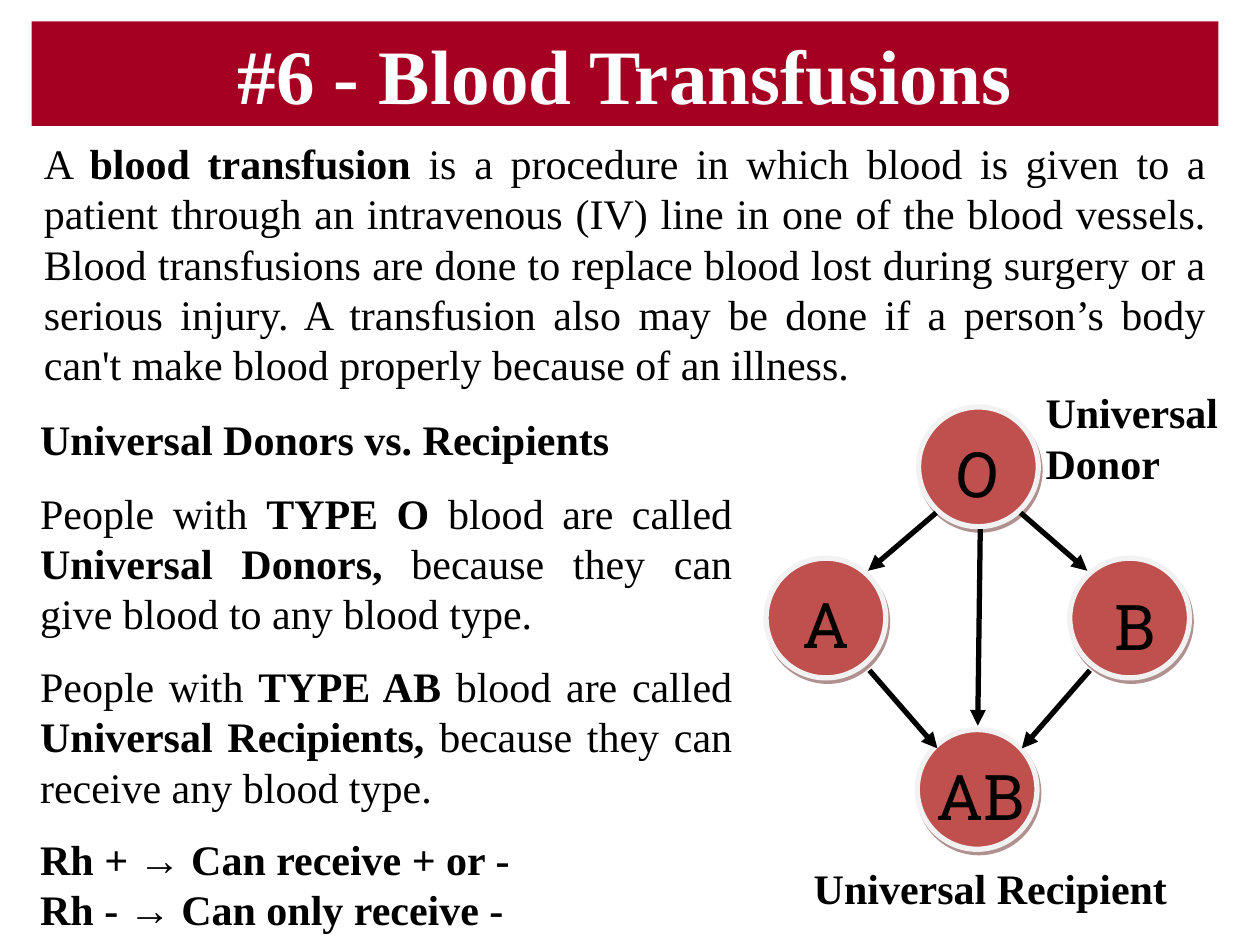
from lxml import etree
from pptx import Presentation
from pptx.dml.color import RGBColor
from pptx.enum.shapes import MSO_CONNECTOR, MSO_SHAPE
from pptx.enum.text import MSO_ANCHOR, PP_ALIGN
from pptx.oxml.ns import qn
from pptx.util import Inches, Pt

LEFT, MID, JUST = PP_ALIGN.LEFT, PP_ALIGN.CENTER, PP_ALIGN.JUSTIFY
SERIF, SLAB = "Times New Roman", "Roboto Slab"
BLACK, WHITE, CRIMSON = "000000", "FFFFFF", "A50021"
CELL, RIM, SHADE = "C0504D", "F2F2F2", "622423"

# A paragraph is (alignment, space before in points, runs); a run is (text, bold).
TITLE = [(MID, 0, [("#6 - Blood Transfusions", True)])]
INTRO = [(JUST, 0, [
    ("A ", False),
    ("blood transfusion ", True),
    ("is a procedure in which blood is given to a patient through an "
     "intravenous (IV) line in one of the blood vessels. Blood transfusions "
     "are done to replace blood lost during surgery or a serious injury. "
     "A transfusion also may be done if a person’s body can't make blood "
     "properly because of an illness. ", False),
])]
TYPES = [
    (JUST, 0, [("Universal Donors vs. Recipients", True)]),
    (JUST, 13.5, [
        ("People with ", False), ("TYPE O ", True),
        ("blood are called ", False), ("Universal Donors, ", True),
        ("because they can give blood to any blood type.", False)]),
    (JUST, 12.5, [
        ("People with ", False), ("TYPE AB ", True),
        ("blood are called ", False), ("Universal Recipients, ", True),
        ("because they can receive any blood type.", False)]),
    (LEFT, 12.5, [("Rh + → Can receive + or -", True)]),
    (LEFT, 0, [("Rh - → Can only receive -", True)]),
]
DONOR = [(LEFT, 0, [("Universal Donor", True)])]
TAKER = [(LEFT, 0, [("Universal Recipient", True)])]

TEXTS = [
    (INTRO, (0.25, 1.04, 9.42, 2.52)),
    (TYPES, (0.22, 3.23, 5.69, 4.37)),
    (DONOR, (8.2, 3.02, 1.86, 0.91)),
    (TAKER, (6.36, 6.8, 3.75, 0.5)),
]

SIZE = 0.95
# Blood type, circle corner, label box, label rotation
CELLS = [
    ("A", (6.08, 4.43), (6.33, 4.6, 0.46, 0.58), 0),
    ("B", (8.49, 4.43), (8.78, 4.61, 0.46, 0.58), 0),
    ("O", (7.29, 3.23), (7.54, 3.4, 0.46, 0.58), 6.1),
    ("AB", (7.28, 5.79), (7.36, 5.96, 0.84, 0.58), 0),
]
ARROWS = [
    ((7.78, 4.2), (7.76, 5.76)),
    ((7.43, 4.07), (6.89, 4.53)),
    ((8.1, 4.07), (8.63, 4.53)),
    ((6.9, 5.32), (7.44, 5.94)),
    ((8.65, 5.32), (8.11, 5.94)),
]


def color(code):
    return RGBColor.from_string(code)


def inches(nums):
    return [Inches(n) for n in nums]


def write(shape, paras, size=24, font=SERIF, ink=BLACK, wrap=True):
    frame = shape.text_frame
    frame.word_wrap = wrap
    for i, (align, gap, runs) in enumerate(paras):
        para = frame.add_paragraph() if i else frame.paragraphs[0]
        para.alignment = align
        para.space_before = Pt(gap)
        for text, bold in runs:
            run = para.add_run()
            run.text = text
            run.font.name = font
            run.font.size = Pt(size)
            run.font.bold = bold
            run.font.color.rgb = color(ink)


def add_block(slide, kind, box, fill):
    shape = slide.shapes.add_shape(kind, *inches(box))
    shape.shadow.inherit = False
    shape.fill.solid()
    shape.fill.fore_color.rgb = color(fill)
    shape.line.fill.background()
    return shape


def add_shade(shape):
    """Cast a hard, half-clear shadow down and to the right."""
    effects = shape._element.spPr.find(qn("a:effectLst"))
    outer = etree.SubElement(effects, qn("a:outerShdw"), blurRad="0",
                             dist=str(Pt(2.2)), dir=str(63 * 60000),
                             algn="ctr", rotWithShape="0")
    tint = etree.SubElement(outer, qn("a:srgbClr"), val=SHADE)
    etree.SubElement(tint, qn("a:alpha"), val="50000")


def add_cell(slide, name, spot, box, turn):
    disc = add_block(slide, MSO_SHAPE.OVAL, (*spot, SIZE, SIZE), CELL)
    disc.line.color.rgb = color(RIM)
    disc.line.width = Pt(3)
    add_shade(disc)
    label = slide.shapes.add_textbox(*inches(box))
    label.rotation = turn
    frame = label.text_frame
    frame.margin_left = frame.margin_right = 0
    write(label, [(MID, 0, [(name, False)])], 36, SLAB, wrap=False)


def add_arrow(slide, start, end):
    arrow = slide.shapes.add_connector(MSO_CONNECTOR.STRAIGHT,
                                       *inches(start + end))
    arrow.line.color.rgb = color(BLACK)
    arrow.line.width = Pt(3)
    etree.SubElement(arrow.line._get_or_add_ln(), qn("a:tailEnd"),
                     type="triangle")
    etree.SubElement(arrow._element.spPr, qn("a:effectLst"))


def main():
    deck = Presentation()
    deck.slide_width, deck.slide_height = inches((10, 7.5))
    slide = deck.slides.add_slide(deck.slide_layouts[6])

    banner = add_block(slide, MSO_SHAPE.RECTANGLE, (0.25, 0.17, 9.42, 0.83),
                       CRIMSON)
    banner.text_frame.vertical_anchor = MSO_ANCHOR.MIDDLE
    write(banner, TITLE, 44, ink=WHITE)

    for cell in CELLS:
        add_cell(slide, *cell)
    for start, end in ARROWS:
        add_arrow(slide, start, end)
    for paras, box in TEXTS:
        write(slide.shapes.add_textbox(*inches(box)), paras)

    deck.save("out.pptx")


if __name__ == "__main__":
    main()
